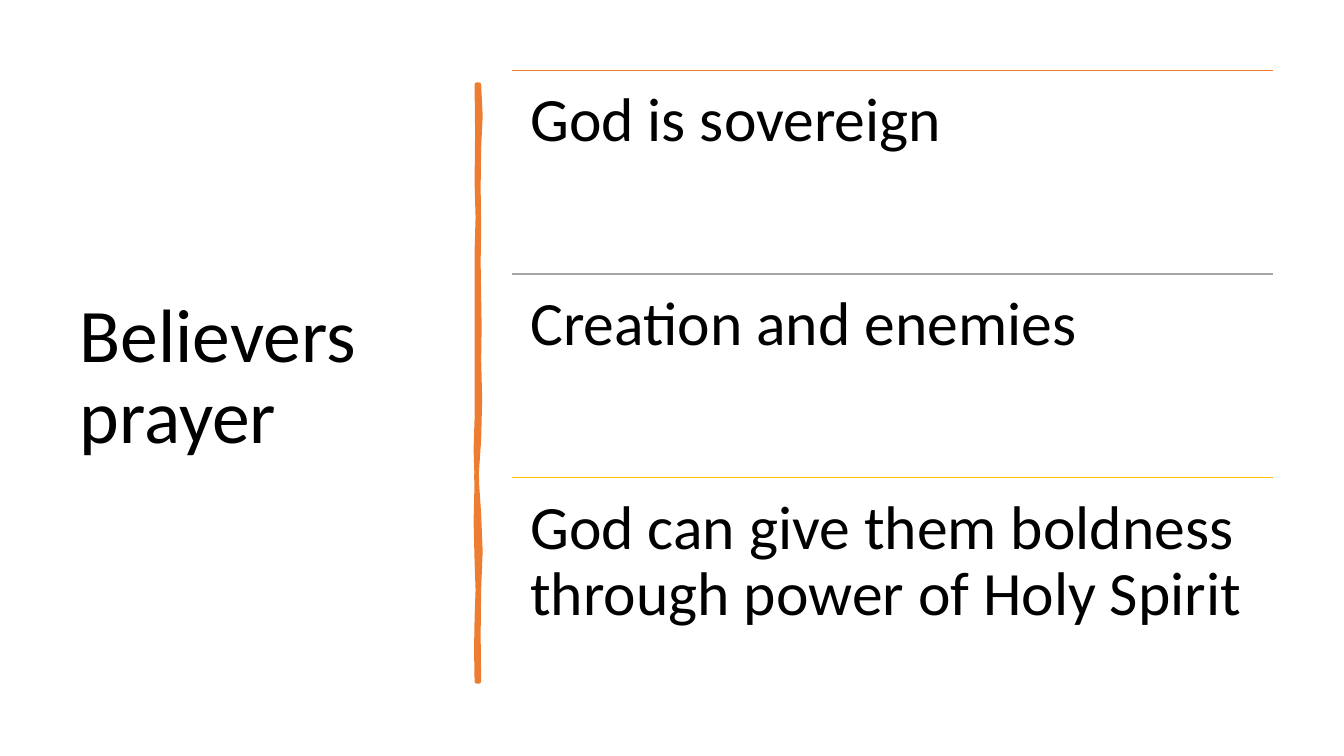
from pptx import Presentation
from pptx.dml.color import RGBColor
from pptx.enum.shapes import MSO_CONNECTOR
from pptx.enum.text import MSO_ANCHOR, MSO_AUTO_SIZE, PP_ALIGN
from pptx.util import Inches, Pt
from lxml.etree import SubElement
from pptx.oxml.ns import qn
from dataclasses import dataclass


@dataclass(frozen=True)
class Theme:
    font: str = "Calibri"
    ink: str = "000000"
    brush: str = "ED7D31"
    rules: tuple = ("ED7D31", "A5A5A5", "FFC000")
    title_size: int = 54
    item_size: int = 44
    rule_width: float = 1
    brush_width: float = 3.25


THEME = Theme()
WIDTH, HEIGHT = 13.33, 7.5

# Grid: a title column, a brush line and three equal rows
TITLE_LEFT, TITLE_WIDTH, TITLE_HEIGHT = 0.69, 3.74, 6.11
LIST_LEFT, LIST_WIDTH = 5.08, 7.55
TOP, ROW_HEIGHT = 0.7, 2.02
INSET = 0.18
ITEMS = (
    "God is sovereign",
    "Creation and enemies",
    "God can give them boldness through power of Holy Spirit",
)

# Brush edges: (end y, sideways bulge in hundredths of an inch)
BRUSH_TOP, BRUSH_BOTTOM = 0.84, 6.76
BRUSH_LEFT, BRUSH_RIGHT = 4.73, 4.75
RIGHT_EDGE = ((1.46, 1.5), (2.26, -0.5), (2.94, -0.5), (3.56, 0.5),
              (4.36, 1), (5.1, -2.5), (5.84, 1.5), (6.76, -0.5))
LEFT_EDGE = ((6.13, -0.5), (5.57, 1), (4.77, -1), (4.15, -1),
             (3.35, 0), (2.5, 0), (1.81, 1), (0.84, 0.5))


def apply_format(target, values):
    for name, value in values.items():
        setattr(target, name, value)


def write_text(shape, text, size, frame_format):
    frame = shape.text_frame
    apply_format(frame, {"word_wrap": True, "auto_size": MSO_AUTO_SIZE.NONE,
                         **frame_format})
    para = frame.paragraphs[0]
    apply_format(para, {"alignment": PP_ALIGN.LEFT, "line_spacing": 0.9})
    span = para.add_run()
    span.text = text
    apply_format(span.font, {"name": THEME.font, "size": Pt(size)})
    span.font.color.rgb = RGBColor.from_string(THEME.ink)


def add_title(page, text):
    title = page.shapes.title
    apply_format(title, {"left": Inches(TITLE_LEFT), "top": Inches(TOP),
                         "width": Inches(TITLE_WIDTH), "height": Inches(TITLE_HEIGHT)})
    write_text(title, text, THEME.title_size, {"vertical_anchor": MSO_ANCHOR.MIDDLE})


def edge_points(x, start, segments):
    """Give each stretch of one side a bulging midpoint and an end."""
    points = []
    for end, bulge in segments:
        points += [(Inches(x + bulge / 100), Inches((start + end) / 2)),
                   (Inches(x), Inches(end))]
        start = end
    return points


def add_brush(page):
    builder = page.shapes.build_freeform(Inches(BRUSH_RIGHT), Inches(BRUSH_TOP), scale=1.0)
    builder.add_line_segments(edge_points(BRUSH_RIGHT, BRUSH_TOP, RIGHT_EDGE)
                              + [(Inches(BRUSH_LEFT), Inches(BRUSH_BOTTOM))]
                              + edge_points(BRUSH_LEFT, BRUSH_BOTTOM, LEFT_EDGE))
    brush = builder.convert_to_shape()
    brush.shadow.inherit = False
    for paint in (brush.fill, brush.line.fill):
        paint.solid()
        paint.fore_color.rgb = RGBColor.from_string(THEME.brush)
    brush.line.width = Pt(THEME.brush_width)


def add_rule(shapes, top, color):
    rule = shapes.add_connector(MSO_CONNECTOR.STRAIGHT, Inches(LIST_LEFT), Inches(top),
                                Inches(LIST_LEFT + LIST_WIDTH), Inches(top))
    rule.line.color.rgb = RGBColor.from_string(color)
    rule.line.width = Pt(THEME.rule_width)
    SubElement(rule._element.spPr, qn("a:effectLst"))


def add_item(shapes, top, text):
    box = shapes.add_textbox(Inches(LIST_LEFT), Inches(top),
                             Inches(LIST_WIDTH), Inches(ROW_HEIGHT))
    margins = {f"margin_{side}": Inches(INSET) for side in ("left", "top", "right", "bottom")}
    write_text(box, text, THEME.item_size, {"vertical_anchor": MSO_ANCHOR.TOP, **margins})


def main():
    deck = Presentation()
    apply_format(deck, {"slide_width": Inches(WIDTH), "slide_height": Inches(HEIGHT)})
    page = deck.slides.add_slide(deck.slide_layouts[5])

    # Title column
    add_title(page, "Believers prayer")

    # Hand-drawn divider
    add_brush(page)

    # Ruled list
    rows = page.shapes.add_group_shape().shapes
    for index, (text, color) in enumerate(zip(ITEMS, THEME.rules)):
        top = TOP + index * ROW_HEIGHT
        add_rule(rows, top, color)
        add_item(rows, top, text)

    deck.save("out.pptx")


if __name__ == "__main__":
    main()
